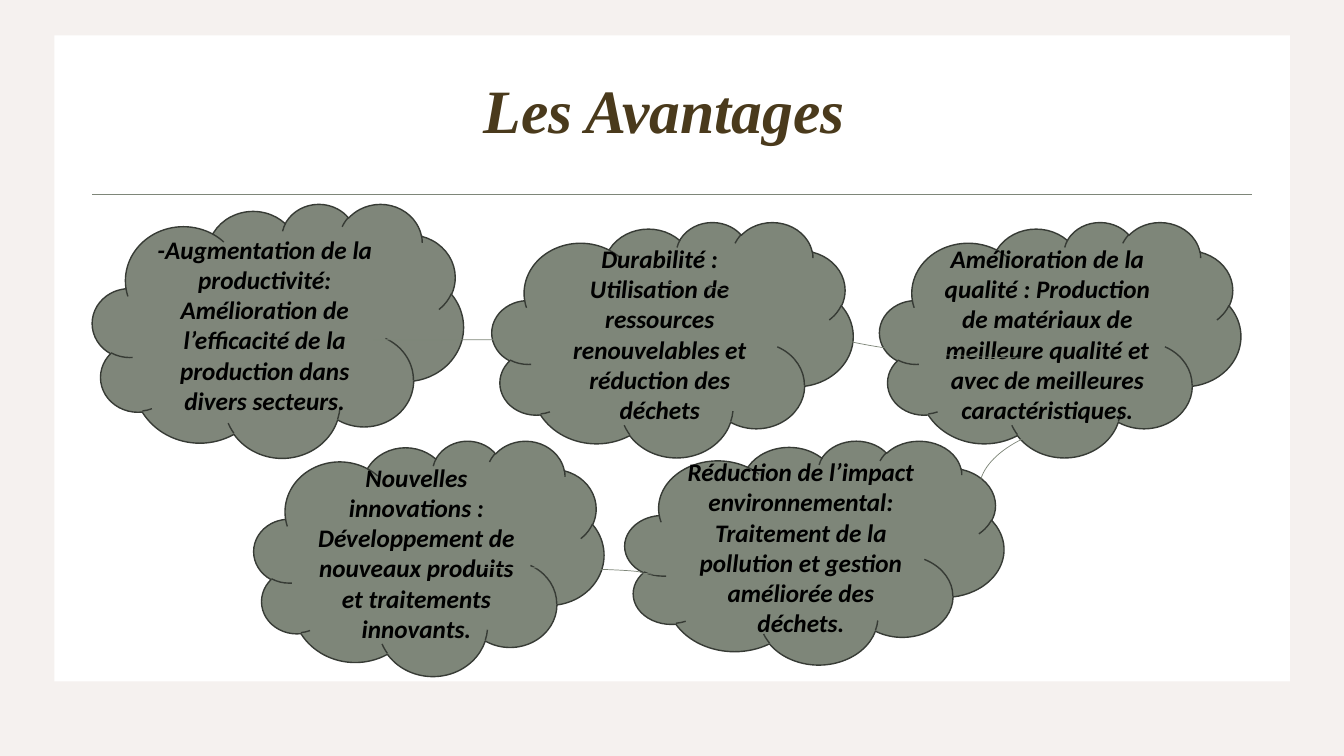
from lxml.etree import SubElement
from pptx import Presentation
from pptx.dml.color import RGBColor
from pptx.enum.shapes import MSO_CONNECTOR, MSO_SHAPE
from pptx.enum.text import MSO_ANCHOR, PP_ALIGN
from pptx.oxml.ns import qn
from pptx.util import Cm, Pt

TITLE_ONLY = 5
SAGE = "7E8679"


def color(hex_string):
    return RGBColor.from_string(hex_string)


class SlideBuilder:
    outline = "373B35"
    body_font = "Calibri"
    title_font = "Times New Roman"

    def __init__(self, deck, background):
        self.slide = deck.slides.add_slide(deck.slide_layouts[TITLE_ONLY])
        self.shapes = self.slide.shapes
        fill = self.slide.background.fill
        fill.solid()
        fill.fore_color.rgb = color(background)

    def shape(self, kind, place, fill):
        box = self.shapes.add_shape(kind, *map(Cm, place))
        box.shadow.inherit = False
        box.fill.solid()
        box.fill.fore_color.rgb = color(fill)
        return box

    def panel(self, place):
        self.shape(MSO_SHAPE.RECTANGLE, place, "FFFFFF").line.fill.background()

    def label(self, box, text, size, font, ink):
        frame = box.text_frame
        frame.word_wrap = True
        frame.vertical_anchor = MSO_ANCHOR.MIDDLE
        para = frame.paragraphs[0]
        para.alignment = PP_ALIGN.CENTER
        span = para.add_run()
        span.text = text
        span.font.size = Pt(size)
        span.font.name = font
        span.font.bold = span.font.italic = True
        span.font.color.rgb = color(ink)
        return para

    def title(self, text, place):
        box = self.shapes.title
        box.left, box.top, box.width, box.height = map(Cm, place)
        para = self.label(box, text, 44, self.title_font, "4A3A1C")
        para.line_spacing = 0.9
        # Bring the title in front of the panel
        box._element.getparent().append(box._element)

    def cloud(self, text, place, fill=SAGE):
        box = self.shape(MSO_SHAPE.CLOUD, place, fill)
        box.line.color.rgb = color(self.outline)
        box.line.width = Pt(1)
        self.label(box, text, 18, self.body_font, "000000")

    def line(self, kind, ends, width):
        connector = self.shapes.add_connector(kind, *map(Cm, ends))
        connector.line.color.rgb = color(SAGE)
        connector.line.width = Pt(width)
        SubElement(connector._element.spPr, qn("a:effectLst"))


def main():
    deck = Presentation()
    deck.slide_width, deck.slide_height = Cm(33.87), Cm(19.05)
    page = SlideBuilder(deck, "F5F1EF")

    # Panel, title and rule
    page.panel((1.37, 0.89, 31.14, 16.28))
    page.line(MSO_CONNECTOR.STRAIGHT, (2.33, 4.9, 31.54, 4.9), 1)
    page.title("Les Avantages ", (2.33, 1.02, 29.21, 3.68))

    # Clouds: upper row, then lower row
    page.cloud("-Augmentation de la productivité: Amélioration de l’efficacité "
               "de la production dans divers secteurs.",
               (2.33, 5.13, 9.35, 6.4), "7F867A")
    page.cloud("Durabilité : Utilisation de ressources renouvelables et "
               "réduction des déchets", (12.4, 5.59, 9.1, 5.93))
    page.cloud("Amélioration de la qualité : Production de matériaux de "
               "meilleure qualité et avec de meilleures caractéristiques.",
               (22.17, 5.59, 9.1, 5.93))
    page.cloud("Nouvelles innovations : Développement de nouveaux produits et "
               "traitements innovants.", (6.4, 11.1, 8.82, 5.93))
    page.cloud("Réduction de l’impact environnemental: Traitement de la "
               "pollution et gestion améliorée des déchets.",
               (15.75, 11.1, 9.55, 5.64))

    # Curved links between the clouds
    for ends in ((9.42, 8.56, 17.42, 8.58), (27.46, 10.67, 21.92, 13.9),
                 (12.12, 14.3, 20.18, 14.55), (14.4, 6.99, 25.84, 9.02)):
        page.line(MSO_CONNECTOR.CURVE, ends, 0.5)

    deck.save("out.pptx")


if __name__ == "__main__":
    main()
